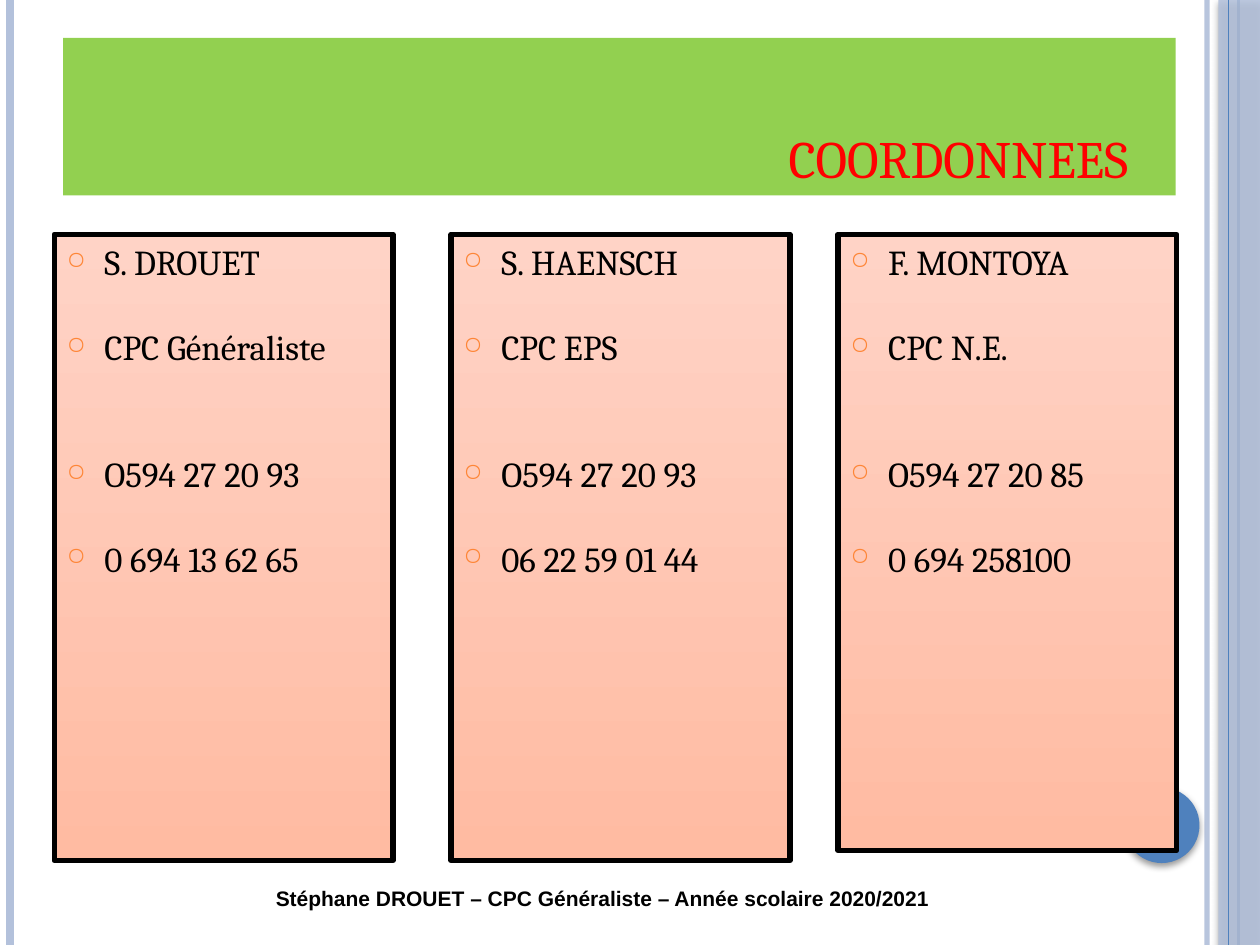
from lxml.etree import SubElement
from pptx import Presentation
from pptx.dml.color import RGBColor
from pptx.enum.shapes import MSO_CONNECTOR, MSO_SHAPE
from pptx.enum.text import MSO_ANCHOR, MSO_AUTO_SIZE, PP_ALIGN
from pptx.oxml.ns import qn
from pptx.util import Inches, Pt

WIDTH, HEIGHT = 10, 7.5
PALE_BLUE = RGBColor(0xB3, 0xC1, 0xDB)
BLUE = RGBColor(0x4F, 0x81, 0xBD)
GREEN = RGBColor(0x92, 0xD0, 0x50)
RED = RGBColor(0xFF, 0x00, 0x00)
BLACK = RGBColor(0x00, 0x00, 0x00)
SALMON = RGBColor(0xFF, 0xBB, 0xA2)
LIGHT_SALMON = RGBColor(0xFF, 0xD3, 0xC6)
ORANGE = RGBColor(0xFE, 0x86, 0x37)

RULES = [(9.58, PALE_BLUE, 3, 93), (0.08, PALE_BLUE, 4.5, 100), (9.83, BLUE, 1.5, 100)]
CARD_TOP, CARD_WIDTH = 1.86, 2.69
CONTACTS = [
    (0.43, 4.97, ["S. DROUET", "CPC Généraliste", "O594 27 20 93", "0 694 13 62 65"]),
    (3.58, 4.97, ["S. HAENSCH", "CPC EPS", "O594 27 20 93", "06 22 59 01 44"]),
    (6.65, 4.89, ["F. MONTOYA", "CPC N.E.", "O594 27 20 85", "0 694 258100"]),
]
ENTRY_GAPS = [0, 24.5, 48.5, 24.5]


def child(parent, tag, **attributes):
    """Append a DrawingML element and return it."""
    element = SubElement(parent, qn(tag))
    for key, value in attributes.items():
        element.set(key, str(value))
    return element


def set_opacity(element, percent):
    """Make the first solid colour inside an element translucent."""
    colour = next(element.iter(qn("a:srgbClr")))
    child(colour, "a:alpha", val=percent * 1000)


def add_rule(slide, x, colour, weight, opacity=100):
    """Draw a vertical rule over the full height of the slide."""
    rule = slide.shapes.add_connector(
        MSO_CONNECTOR.STRAIGHT, Inches(x), 0, Inches(x), Inches(HEIGHT))
    rule.line.color.rgb = colour
    rule.line.width = Pt(weight)
    child(rule._element.spPr, "a:effectLst")
    if opacity < 100:
        set_opacity(rule._element.spPr, opacity)


def add_block(slide, preset, left, top, width, height):
    """Add a preset shape without an outline or shadow."""
    block = slide.shapes.add_shape(
        preset, Inches(left), Inches(top), Inches(width), Inches(height))
    block.shadow.inherit = False
    block.line.fill.background()
    return block


def add_ornament(slide, preset, box, colour, opacity=100):
    """Add a decorative shape with a soft shadow below it."""
    ornament = add_block(slide, preset, *box)
    ornament.fill.solid()
    ornament.fill.fore_color.rgb = colour
    properties = ornament._element.spPr
    if opacity < 100:
        set_opacity(properties, opacity)
    shadow = child(properties.find(qn("a:effectLst")), "a:outerShdw",
                   blurRad=Pt(4), dist=Pt(2), dir=5400000, rotWithShape=0)
    child(child(shadow, "a:srgbClr", val="000000"), "a:alpha", val=40000)


def write(paragraph, text, size, font="Cambria", colour=BLACK, bold=False,
          align=PP_ALIGN.LEFT, before=0):
    """Write one formatted run into a paragraph."""
    paragraph.alignment = align
    paragraph.space_before = Pt(before)
    run = paragraph.add_run()
    run.text = text
    run.font.size = Pt(size)
    run.font.name = font
    run.font.bold = bold
    run.font.color.rgb = colour
    return run


def add_bullet(paragraph):
    """Give a paragraph a hanging orange circle."""
    properties = paragraph._p.get_or_add_pPr()
    properties.set("marL", str(Inches(0.3)))
    properties.set("indent", str(-Inches(0.3)))
    child(child(properties, "a:buClr"), "a:srgbClr", val=ORANGE)
    child(properties, "a:buSzPct", val=70000)
    child(properties, "a:buChar", char="○")


def add_title(slide, text):
    """Place the title on its green band, right of the middle."""
    title = slide.shapes.title
    title.left, title.top = Inches(0.5), Inches(0.3)
    title.width, title.height = Inches(8.83), Inches(1.25)
    title.fill.solid()
    title.fill.fore_color.rgb = GREEN
    frame = title.text_frame
    frame.auto_size = MSO_AUTO_SIZE.NONE
    frame.vertical_anchor = MSO_ANCHOR.BOTTOM
    heading = frame.paragraphs[0]
    run = write(heading, text, 30, colour=RED, align=PP_ALIGN.CENTER)
    run.font._element.set("cap", "small")
    heading._p.get_or_add_pPr().set("marL", str(Inches(2.69)))


def add_contact(slide, left, height, entries):
    """Add a contact card with its bulleted entries."""
    card = add_block(slide, MSO_SHAPE.RECTANGLE, left, CARD_TOP, CARD_WIDTH, height)
    card.fill.gradient()
    card.fill.gradient_angle = 90
    for stop, colour in zip(card.fill.gradient_stops, (SALMON, LIGHT_SALMON)):
        stop.color.rgb = colour
    for stop, position in zip(card.fill.gradient_stops, (0, 1)):
        stop.position = position
    card.line.color.rgb = BLACK
    card.line.width = Pt(3)
    frame = card.text_frame
    frame.word_wrap = True
    frame.vertical_anchor = MSO_ANCHOR.TOP
    for index, (entry, gap) in enumerate(zip(entries, ENTRY_GAPS)):
        paragraph = frame.add_paragraph() if index else frame.paragraphs[0]
        write(paragraph, entry, 20, before=gap)
        add_bullet(paragraph)


def add_footer(slide, text):
    """Add the author line below the cards."""
    footer = slide.shapes.add_textbox(
        Inches(2.09), Inches(6.98), Inches(5.59), Inches(0.3))
    footer.text_frame.word_wrap = True
    write(footer.text_frame.paragraphs[0], text, 12, font="Arial", bold=True)


def main():
    """Build the contact slide and save it."""
    deck = Presentation()
    deck.slide_width, deck.slide_height = Inches(WIDTH), Inches(HEIGHT)
    slide = deck.slides.add_slide(deck.slide_layouts[5])
    for rule in RULES:
        add_rule(slide, *rule)
    add_ornament(slide, MSO_SHAPE.RECTANGLE, (9.67, 0, 0.33, HEIGHT), PALE_BLUE, 87)
    add_rule(slide, 9.75, BLUE, 0.75)
    add_ornament(slide, MSO_SHAPE.OVAL, (8.92, 6.25, 0.6, 0.6), BLUE)
    add_title(slide, "COORDONNEES")
    for contact in CONTACTS:
        add_contact(slide, *contact)
    add_footer(slide, "Stéphane DROUET – CPC Généraliste – Année scolaire 2020/2021")
    deck.save("out.pptx")


if __name__ == "__main__":
    main()
